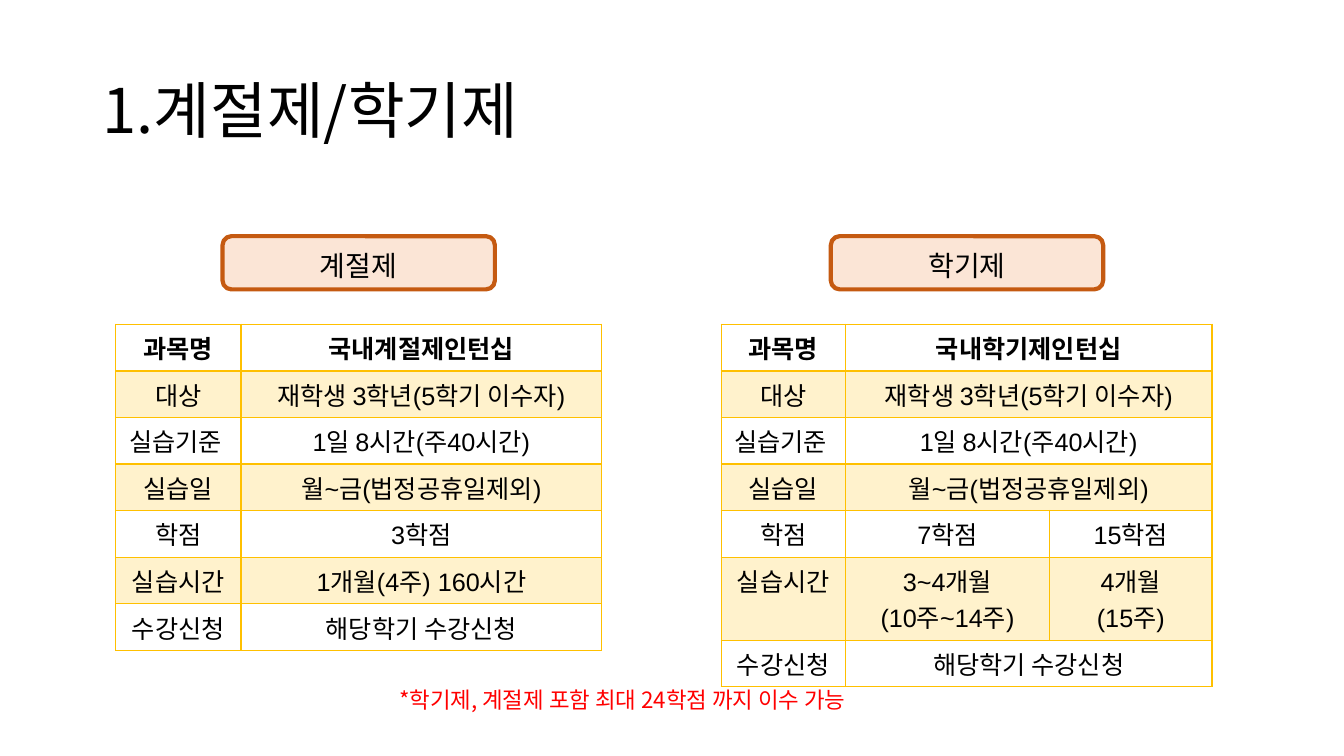
import pptx
import pptx.dml.color
import pptx.enum.shapes
import pptx.enum.text
import pptx.oxml
import pptx.oxml.ns
import pptx.util
from lxml import etree

Pt = pptx.util.Pt
ALIGN = pptx.enum.text.PP_ALIGN
MIDDLE = pptx.enum.text.MSO_ANCHOR.MIDDLE
COLORS = {
    "text": "000000",
    "note": "FF0000",
    "label": "FBE5D6",
    "label_line": "C55A11",
    "gold": "FFC000",
}
KOREAN = "Noto Sans CJK KR"


def rgb(name):
    return pptx.dml.color.RGBColor.from_string(COLORS[name])


class SlideBuilder:
    def __init__(self, slide):
        self.slide = slide

    def add_text(self, paragraph, text, size, font=KOREAN, color="text", bold=False):
        run = paragraph.add_run()
        run.text = text
        run.font.size = Pt(size)
        run.font.bold = bold
        run.font.color.rgb = rgb(color)
        run.font.name = font
        properties = run._r.get_or_add_rPr()
        east_asian = etree.SubElement(properties, pptx.oxml.ns.qn("a:ea"))
        east_asian.set("typeface", KOREAN)

    def title(self, text, left, top, width, height):
        title = self.slide.shapes.title
        title.left, title.top = Pt(left), Pt(top)
        title.width, title.height = Pt(width), Pt(height)
        title.text_frame.vertical_anchor = MIDDLE
        paragraph = title.text_frame.paragraphs[0]
        paragraph.alignment = ALIGN.LEFT
        paragraph.line_spacing = 0.9
        self.add_text(paragraph, text, 44)

    def label(self, text, left, top, width, height):
        label = self.slide.shapes.add_shape(
            pptx.enum.shapes.MSO_SHAPE.ROUNDED_RECTANGLE,
            Pt(left), Pt(top), Pt(width), Pt(height))
        label.shadow.inherit = False
        label.fill.solid()
        label.fill.fore_color.rgb = rgb("label")
        label.line.color.rgb = rgb("label_line")
        label.line.width = Pt(3)
        frame = label.text_frame
        frame.vertical_anchor = MIDDLE
        frame.margin_top, frame.margin_bottom = Pt(6), Pt(0)
        paragraph = frame.paragraphs[0]
        paragraph.alignment = ALIGN.CENTER
        paragraph.line_spacing = 0.9
        self.add_text(paragraph, text, 20)

    def note(self, text, left, top, width, height):
        note = self.slide.shapes.add_textbox(Pt(left), Pt(top), Pt(width), Pt(height))
        note.text_frame.word_wrap = True
        self.add_text(note.text_frame.paragraphs[0], text, 16, color="note")

    def borders(self, cell, bottom):
        properties = cell._tc.get_or_add_tcPr()
        for side, width in (("L", 1), ("R", 1), ("T", 1), ("B", bottom)):
            properties.append(pptx.oxml.parse_xml(
                f'<a:ln{side} {pptx.oxml.ns.nsdecls("a")} w="{Pt(width)}"><a:solidFill>'
                f'<a:srgbClr val="{COLORS["gold"]}"/></a:solidFill></a:ln{side}>'))

    def shade(self, cell):
        cell.fill.solid()
        cell.fill.fore_color.rgb = rgb("gold")
        gold = cell._tc.tcPr.find(pptx.oxml.ns.qn("a:solidFill"))[0]
        etree.SubElement(gold, pptx.oxml.ns.qn("a:alpha")).set("val", "20000")

    def table(self, rows, left, top, widths, heights):
        table = self.slide.shapes.add_table(
            len(rows), len(widths), Pt(left), Pt(top),
            Pt(sum(widths)), Pt(sum(heights))).table
        table.horz_banding = False
        for column, width in zip(table.columns, widths):
            column.width = Pt(width)
        for index, (texts, height) in enumerate(zip(rows, heights)):
            table.rows[index].height = Pt(height)
            for column in range(len(widths)):
                cell = table.cell(index, column)
                self.borders(cell, 2 if index == 0 else 1)
                if index % 2:
                    self.shade(cell)
                else:
                    cell.fill.background()
            if len(texts) < len(widths):
                table.cell(index, len(texts) - 1).merge(table.cell(index, len(widths) - 1))
            for column, text in enumerate(texts):
                frame = table.cell(index, column).text_frame
                for number, line in enumerate(text.split("\n")):
                    paragraph = frame.add_paragraph() if number else frame.paragraphs[0]
                    paragraph.alignment = ALIGN.CENTER
                    self.add_text(paragraph, line, 18, "Arial", bold=index == 0)


def program_rows(course, credits, hours):
    return [
        ["과목명", course],
        ["대상", "재학생 3학년(5학기 이수자)"],
        ["실습기준 ", "1일 8시간(주40시간)"],
        ["실습일", "월~금(법정공휴일제외)"],
        ["학점", *credits],
        ["실습시간", *hours],
        ["수강신청", "해당학기 수강신청"],
    ]


def main():
    presentation = pptx.Presentation()
    presentation.slide_width, presentation.slide_height = Pt(960), Pt(540)
    builder = SlideBuilder(presentation.slides.add_slide(presentation.slide_layouts[5]))
    builder.title("1.계절제/학기제", 66, 28.8, 828, 104.4)

    seasonal = program_rows("국내계절제인턴십", ["3학점"], ["1개월(4주) 160시간"])
    semester = program_rows("국내학기제인턴십", ["7학점", "15학점"],
                            ["3~4개월\n(10주~14주)", "4개월\n(15주)"])
    programs = [
        ("계절제", 159, seasonal, 82.6, [89.5, 257.8], [32.2] * 7),
        ("학기제", 593.5, semester, 515.2, [88.6, 146, 116], [32] * 5 + [54.7, 32]),
    ]
    for name, label_left, rows, table_left, widths, heights in programs:
        builder.label(name, label_left, 168.7, 194.5, 38)
        builder.table(rows, table_left, 231.6, widths, heights)

    builder.note("*학기제, 계절제 포함 최대 24학점 까지 이수 가능", 278, 486.7, 677.5, 26.7)
    presentation.save("out.pptx")


if __name__ == "__main__":
    main()
